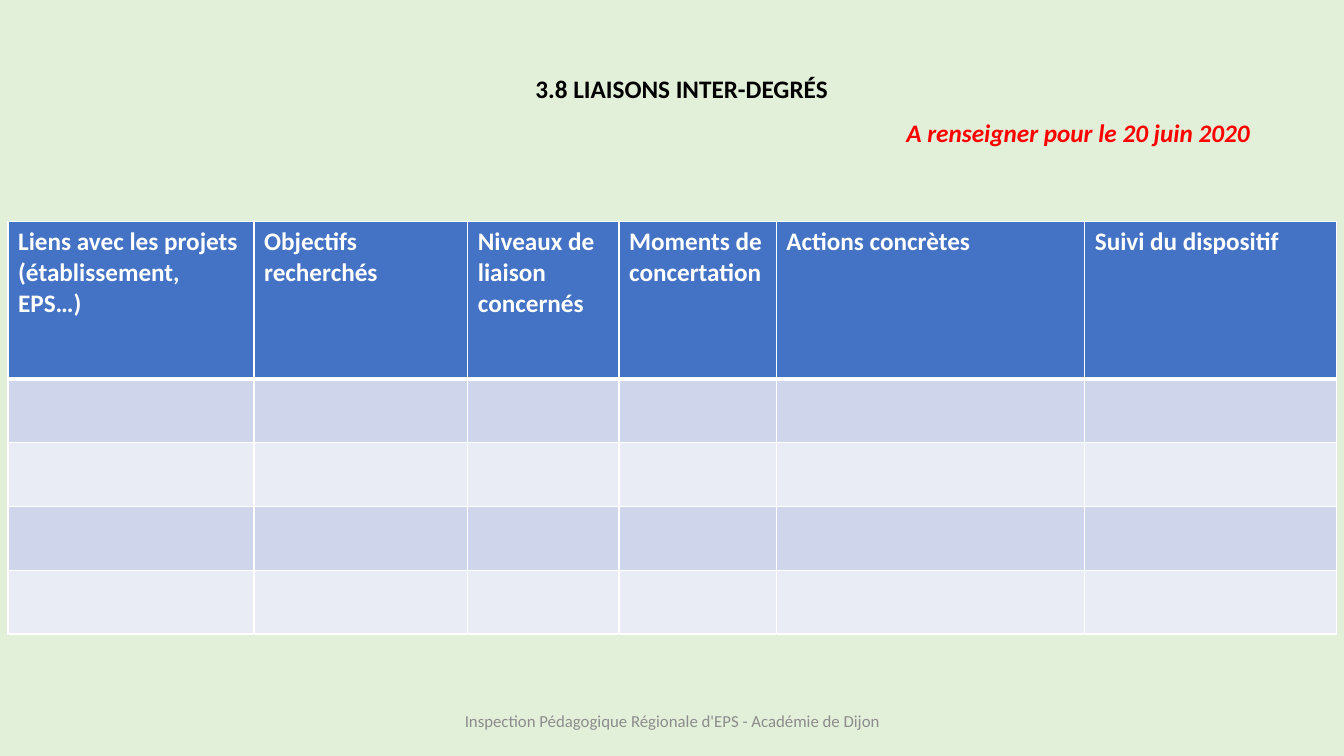
from dataclasses import dataclass

from lxml import etree
from pptx import Presentation
from pptx.dml.color import RGBColor
from pptx.enum.text import MSO_ANCHOR, MSO_AUTO_SIZE, PP_ALIGN
from pptx.oxml.ns import qn
from pptx.util import Inches, Pt

LEFT, CENTER = PP_ALIGN.LEFT, PP_ALIGN.CENTER
TOP, MIDDLE = MSO_ANCHOR.TOP, MSO_ANCHOR.MIDDLE
NO_AUTOFIT = MSO_AUTO_SIZE.NONE
TITLE_ONLY = 5


@dataclass(frozen=True)
class Theme:
    font: str = "Calibri"
    background: str = "E2F0D9"
    title: str = "000000"
    deadline: str = "FF0000"
    header: str = "4472C4"
    bands: tuple = ("CFD5EA", "E9EBF5")
    white: str = "FFFFFF"
    footer: str = "8C8C8C"
    body_size: int = 18
    footer_size: int = 12
    thin: int = 1
    thick: int = 3


THEME = Theme()

HEADINGS = [
    ["Liens avec les projets", "(établissement, EPS…)"],
    ["Objectifs recherchés"],
    ["Niveaux de liaison concernés"],
    ["Moments de concertation"],
    ["Actions concrètes"],
    ["Suivi du dispositif"],
]
COLUMN_WIDTHS = [2.44, 2.12, 1.5, 1.56, 3.06, 2.5]
HEADER_HEIGHT = 1.56
EMPTY_ROWS = 4


def format_paragraph(paragraph, text, color, size=THEME.body_size,
                     align=LEFT, indent=0, **font_values):
    paragraph.text = text
    paragraph.alignment = align
    if indent:
        properties = paragraph._p.get_or_add_pPr()
        properties.set("marL", str(Inches(indent)))
        properties.set("indent", "0")
    values = {"name": THEME.font, "size": Pt(size), "bold": False,
              "italic": False, **font_values}
    font = paragraph.runs[0].font
    for name, value in values.items():
        setattr(font, name, value)
    font.color.rgb = RGBColor.from_string(color)


def place(shape, left, top, width, height):
    box = {"left": left, "top": top, "width": width, "height": height}
    for name, value in box.items():
        setattr(shape, name, Inches(value))


def add_heading(slide, left, top, width, height):
    shape = slide.shapes.title
    place(shape, left, top, width, height)
    frame = shape.text_frame
    frame.word_wrap = True
    frame.auto_size = NO_AUTOFIT
    frame.vertical_anchor = TOP
    format_paragraph(frame.paragraphs[0], "3.8 LIAISONS INTER-DEGRÉS",
                     THEME.title, indent=0.79, bold=True)
    deadline = frame.add_paragraph()
    format_paragraph(deadline, "A renseigner pour le 20 juin 2020",
                     THEME.deadline, indent=4.47, bold=True, italic=True)
    deadline.space_before = Pt(9.5)


def set_borders(cell, top, bottom):
    properties = cell._tc.get_or_add_tcPr()
    widths = {"a:lnL": THEME.thin, "a:lnR": THEME.thin,
              "a:lnT": top, "a:lnB": bottom}
    for tag, width in widths.items():
        line = etree.SubElement(properties, qn(tag), w=str(Pt(width)))
        fill = etree.SubElement(line, qn("a:solidFill"))
        etree.SubElement(fill, qn("a:srgbClr"), val=THEME.white)


def fill_cell(cell, color):
    cell.fill.solid()
    cell.fill.fore_color.rgb = RGBColor.from_string(color)


def add_liaison_table(slide, left, top, width, height):
    table = slide.shapes.add_table(
        EMPTY_ROWS + 1, len(HEADINGS),
        Inches(left), Inches(top), Inches(width), Inches(height)).table
    for column, column_width in zip(table.columns, COLUMN_WIDTHS):
        column.width = Inches(column_width)

    # Row heights: the empty rows share what the header leaves
    for index, row in enumerate(table.rows):
        row.height = Inches((height - HEADER_HEIGHT) / EMPTY_ROWS
                            if index else HEADER_HEIGHT)

        # Fills and borders, with a thick rule under the header
        color = THEME.bands[(index - 1) % 2] if index else THEME.header
        for cell in row.cells:
            set_borders(cell,
                        top=THEME.thick if index == 1 else THEME.thin,
                        bottom=THEME.thick if index == 0 else THEME.thin)
            fill_cell(cell, color)

    # Column headings
    for cell, lines in zip(table.rows[0].cells, HEADINGS):
        frame = cell.text_frame
        for index, line in enumerate(lines):
            paragraph = frame.add_paragraph() if index else frame.paragraphs[0]
            format_paragraph(paragraph, line, THEME.white, bold=True)


def add_footer(slide, left, top, width, height):
    shape = slide.shapes.add_textbox(
        Inches(left), Inches(top), Inches(width), Inches(height))
    frame = shape.text_frame
    frame.word_wrap = True
    frame.vertical_anchor = MIDDLE
    format_paragraph(frame.paragraphs[0],
                     "Inspection Pédagogique Régionale d'EPS - Académie de Dijon",
                     THEME.footer, size=THEME.footer_size, align=CENTER)


def main():
    presentation = Presentation()
    presentation.slide_width = Inches(13.33)
    presentation.slide_height = Inches(7.5)
    slide = presentation.slides.add_slide(presentation.slide_layouts[TITLE_ONLY])
    background = slide.background.fill
    background.solid()
    background.fore_color.rgb = RGBColor.from_string(THEME.background)

    add_heading(slide, 4.42, 0.68, 8.91, 1.35)
    add_liaison_table(slide, 0.08, 2.2, sum(COLUMN_WIDTHS), 4.09)
    add_footer(slide, 4.42, 6.95, 4.5, 0.4)
    presentation.save("out.pptx")


if __name__ == "__main__":
    main()
